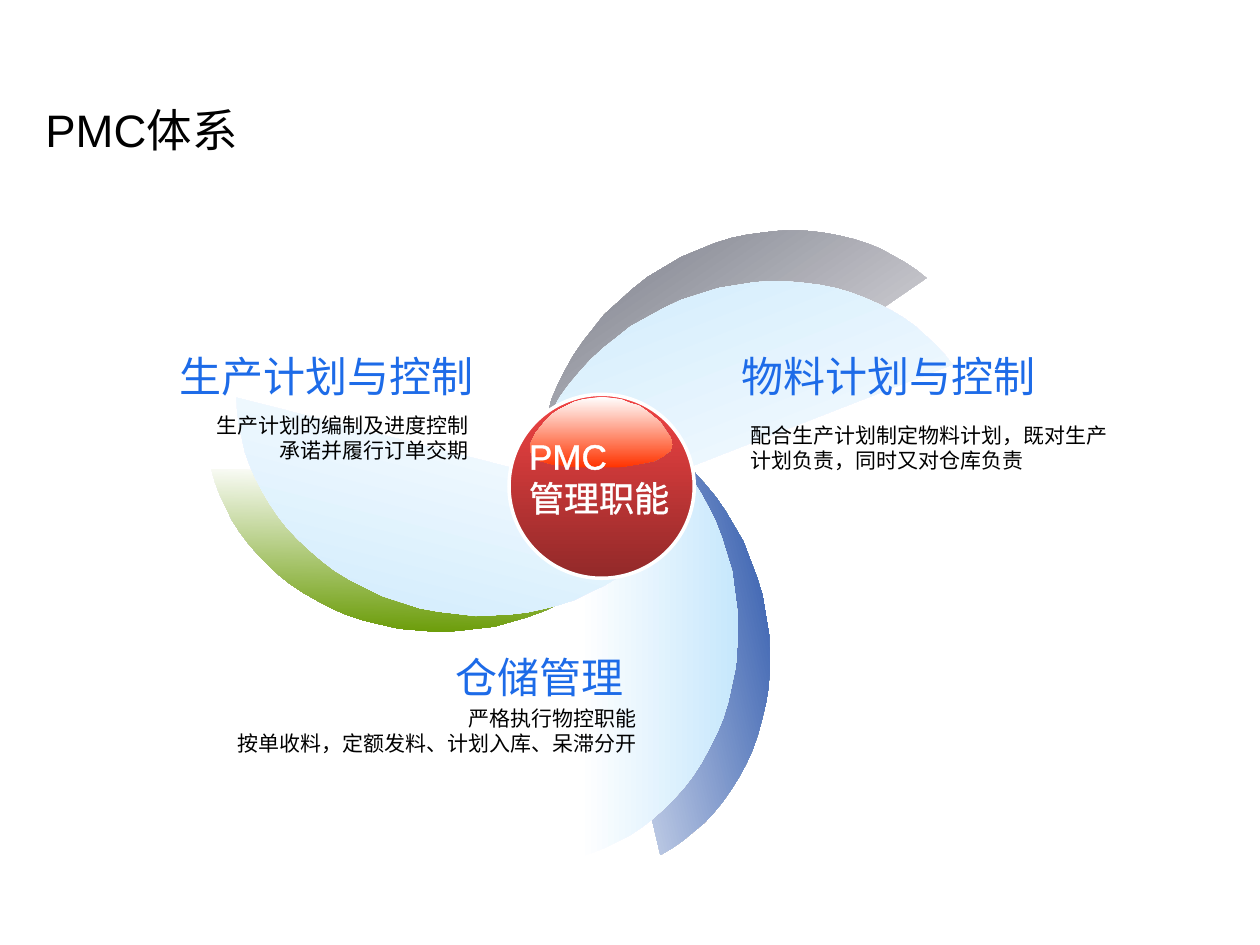
from copy import deepcopy
from dataclasses import dataclass

from lxml.etree import SubElement
from pptx import Presentation
from pptx.dml.color import RGBColor
from pptx.enum.shapes import MSO_SHAPE as Preset
from pptx.enum.text import MSO_ANCHOR as Anchor, MSO_AUTO_SIZE as AutoSize, PP_ALIGN as Align
from pptx.oxml.ns import qn
from pptx.util import Inches, Pt

UNITS_PER_INCH = 100
BLADE_OUTLINE = [
    (0, 0), (9, 3), (19, 6), (28, 11), (38, 16), (47, 22), (56, 29), (65, 36),
    (73, 44), (81, 54), (89, 63), (96, 74), (102, 85), (108, 97), (113, 110),
    (117, 123), (121, 136), (123, 151), (125, 166), (126, 181), (125, 197),
    (124, 212), (121, 226), (118, 240), (114, 253), (109, 265), (103, 277),
    (97, 288), (90, 299), (83, 308), (75, 317), (67, 325), (58, 333), (49, 340),
    (40, 346), (30, 351), (20, 356), (10, 360), (0, 363),
]
GLOSS_OUTLINE = [
    (111, 32), (112, 35), (113, 38), (112, 40), (111, 43), (108, 45), (106, 47),
    (102, 49), (98, 51), (93, 52), (88, 53), (82, 54), (76, 55), (70, 56), (40, 56),
    (35, 55), (29, 55), (24, 54), (20, 54), (15, 53), (12, 52), (8, 51), (5, 49),
    (3, 48), (1, 46), (0, 43), (0, 38), (1, 35), (4, 29), (8, 24), (12, 19),
    (17, 14), (23, 10), (29, 7), (35, 4), (42, 2), (49, 1), (57, 0), (65, 1),
    (72, 2), (79, 5), (86, 7), (92, 11), (98, 16), (103, 20), (107, 26),
]
HEADING_STOPS = [("81ABFF", 0), ("1D6BE8", 75), ("005CCF", 100)]


@dataclass
class Blade:
    left: float
    top: float
    rotation: float
    color: str


@dataclass
class Caption:
    left: float
    top: float
    width: float
    height: float
    lines: list[str]
    size: float
    font: str
    color: str | None = None
    align: Align = Align.LEFT
    anchor: Anchor = Anchor.TOP
    wrap: bool = True
    outline: float = 0


PALE = "C6E7FC"
BLADES = [
    Blade(4.81, 3.06, 346.8, "003399"),
    Blade(2.85, 2.57, 91, "669900"),
    Blade(4.87, 0.9, 235.5, "565868"),
    Blade(4.6, 3.17, 0, PALE),
    Blade(2.85, 2.4, 104.3, PALE),
    Blade(5.01, 1.15, 248.7, PALE),
]


def heading(left: float, top: float, width: float, text: str) -> Caption:
    return Caption(left, top, width, 0.5, [text], 24, "Arial")


def detail(left: float, top: float, width: float, height: float,
           lines: list[str], align: Align) -> Caption:
    return Caption(left, top, width, height, lines, 12, "Calibri", "000000", align, Anchor.MIDDLE)


CAPTIONS = [
    detail(0.46, 3.2, 3.36, 0.55, ["生产计划的编制及进度控制", "承诺并履行订单交期"], Align.RIGHT),
    heading(1.33, 2.73, 2.66, "生产计划与控制"),
    detail(5.86, 3.28, 3.15, 0.55, ["配合生产计划制定物料计划，既对生产计划负责，同时又对仓库负责"], Align.LEFT),
    heading(5.79, 2.73, 3.74, "物料计划与控制"),
    heading(3.52, 5.12, 1.8, "仓储管理"),
    detail(1.53, 5.48, 3.62, 0.64, ["严格执行物控职能", "按单收料，定额发料、计划入库、呆滞分开"], Align.RIGHT),
    Caption(4.1, 3.4, 1.32, 0.77, ["PMC", "管理职能"], 20, "Arial", "FFFFFF", wrap=False, outline=1.45),
]
TITLE = Caption(0.26, 0.76, 3.47, 0.53, ["PMC体系"], 26, "Arial", "000000")


def rgb(color: str) -> RGBColor:
    return RGBColor.from_string(color)


def paint_gradient(fill, start: str, end: str, angle: float) -> None:
    fill.gradient()
    fill.gradient_angle = angle
    for stop, color, position in zip(fill.gradient_stops, (start, end), (0, 1)):
        stop.color.rgb = rgb(color)
        stop.position = position


def paint_heading(span) -> None:
    paint_gradient(span.font.fill, HEADING_STOPS[0][0], HEADING_STOPS[-1][0], 270)
    stops = span._r.find(".//" + qn("a:gsLst"))
    stops.insert(1, deepcopy(stops[0]))
    for stop, (color, percent) in zip(stops, HEADING_STOPS):
        stop.set("pos", str(percent * 1000))
        stop[0].set("val", color)


def outline_text(span, color: str, width: float) -> None:
    properties = span._r.get_or_add_rPr()
    line = SubElement(properties, qn("a:ln"), w=str(int(Pt(width))))
    SubElement(SubElement(line, qn("a:solidFill")), qn("a:srgbClr"), val=color)
    properties.insert(0, line)


def draw_outline(page, points: list[tuple[int, int]], left: float, top: float,
                 color: str, angle: float):
    builder = page.shapes.build_freeform(*points[0], scale=Inches(1) / UNITS_PER_INCH)
    builder.add_line_segments(points[1:], close=True)
    shape = builder.convert_to_shape()
    shape.left, shape.top = Inches(left), Inches(top)
    shape.shadow.inherit = False
    shape.line.fill.background()
    paint_gradient(shape.fill, "FFFFFF", color, angle)
    return shape


def draw_hub(page) -> None:
    hub = page.shapes.add_shape(Preset.OVAL, Inches(4.04), Inches(3.13), Inches(1.47), Inches(1.46))
    hub.shadow.inherit = False
    paint_gradient(hub.fill, "F14343", "922929", 270)
    hub.line.color.rgb = rgb("FFFFFF")
    hub.line.width = Pt(2)
    draw_outline(page, GLOSS_OUTLINE, 4.21, 3.15, "FF3300", 270)


def write_caption(box, caption: Caption) -> None:
    box.left, box.top = Inches(caption.left), Inches(caption.top)
    box.width, box.height = Inches(caption.width), Inches(caption.height)
    frame = box.text_frame
    frame.word_wrap = caption.wrap
    frame.auto_size = AutoSize.NONE
    frame.vertical_anchor = caption.anchor
    for index, text in enumerate(caption.lines):
        para = frame.add_paragraph() if index else frame.paragraphs[0]
        para.alignment = caption.align
        span = para.add_run()
        span.text = text
        span.font.size = Pt(caption.size)
        span.font.name = caption.font
        if caption.color:
            span.font.color.rgb = rgb(caption.color)
        else:
            paint_heading(span)
        if caption.outline:
            outline_text(span, caption.color, caption.outline)


def main() -> None:
    deck = Presentation()
    deck.slide_width, deck.slide_height = Inches(10), Inches(7.5)
    page = deck.slides.add_slide(deck.slide_layouts[5])
    write_caption(page.shapes.title, TITLE)
    for blade in BLADES:
        shape = draw_outline(page, BLADE_OUTLINE, blade.left, blade.top, blade.color, 0)
        shape.rotation = blade.rotation
    draw_hub(page)
    for caption in CAPTIONS:
        write_caption(page.shapes.add_textbox(0, 0, 0, 0), caption)
    deck.save("out.pptx")


if __name__ == "__main__":
    main()
